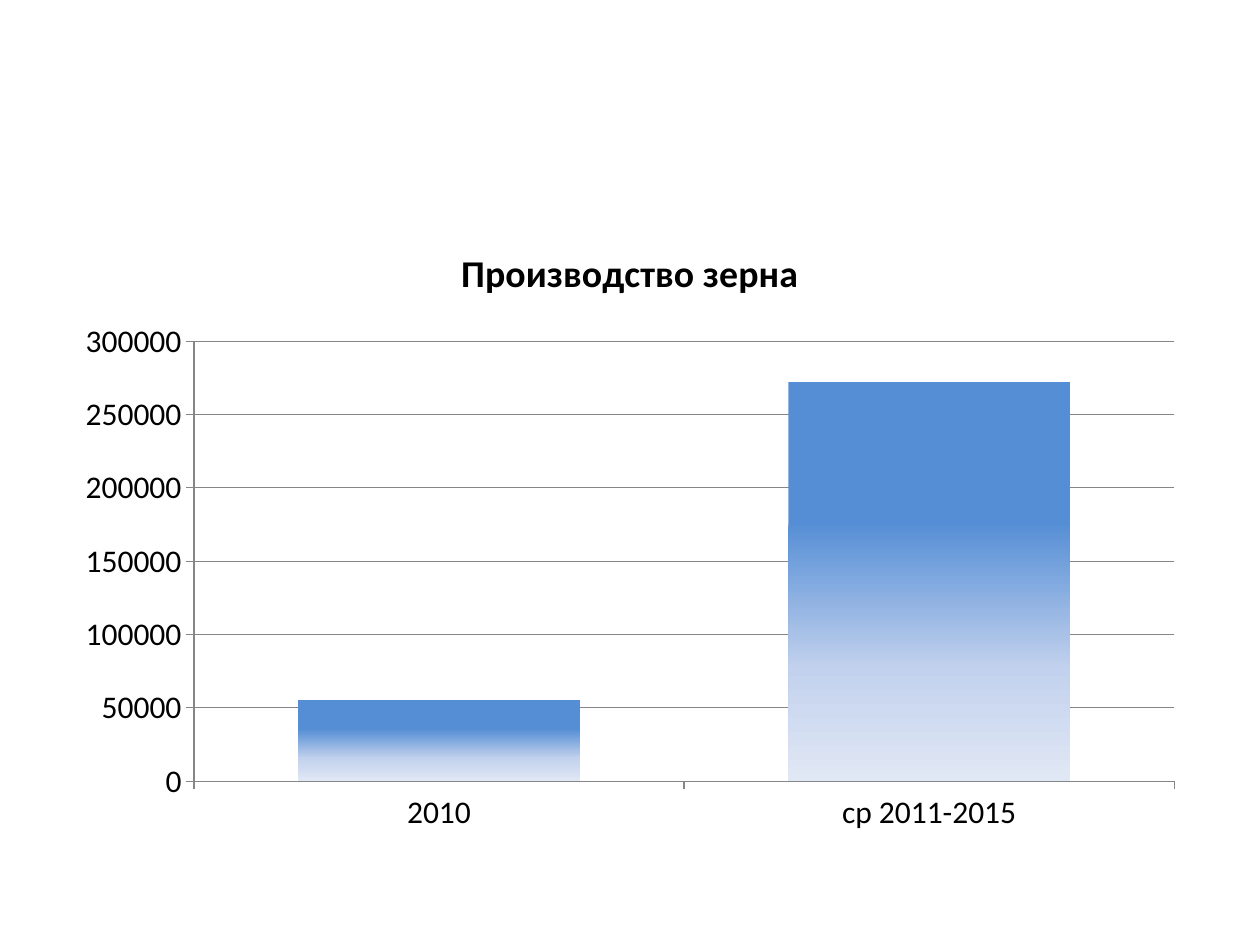
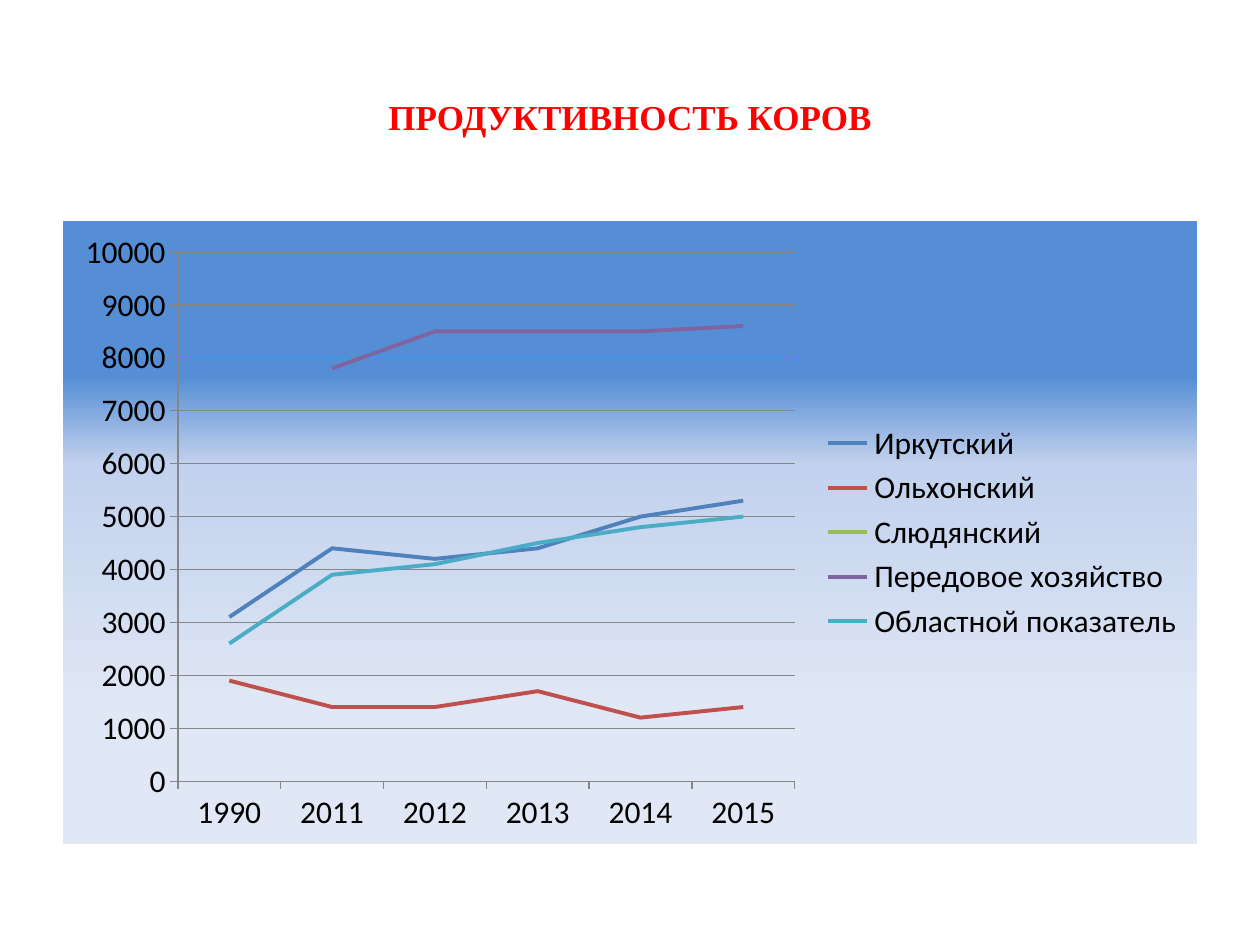
"""Builds two slides of farming statistics: grain output and milk yield of cows."""
from lxml import etree
from pptx import Presentation
from pptx.chart.data import CategoryChartData
from pptx.dml.color import RGBColor
from pptx.enum.chart import XL_CHART_TYPE, XL_LEGEND_POSITION, XL_TICK_MARK
from pptx.enum.text import MSO_ANCHOR, PP_ALIGN
from pptx.oxml.ns import nsdecls, qn
from pptx.util import Inches, Pt

SLIDE_WIDTH, SLIDE_HEIGHT = Inches(10), Inches(7.5)
MARGIN = 0.05
TITLE_TOP, TITLE_HEIGHT = 0.04, 1 / 6
CHART_TOP, CHART_HEIGHT = 0.7 / 3, 0.66

CHART_FONT, TITLE_FONT = "Calibri", "Times New Roman"
BLACK, RED, AXIS_GRAY = "000000", "FF0000", "868686"
SKY = ["558ED5", "C2D1ED", "E1E8F5"]

GRAIN_TITLE = "Производство зерна"
GRAIN = {
    "categories": ["2010", "ср 2011-2015"],
    "series": [(GRAIN_TITLE, [55000, 272000])],
}
GRAIN_STOPS = [35, 72, 100]

COWS_TITLE = "ПРОДУКТИВНОСТЬ КОРОВ"
COWS = {
    "categories": ["1990", "2011", "2012", "2013", "2014", "2015"],
    "series": [
        ("Иркутский", [3100, 4400, 4200, 4400, 5000, 5300]),
        ("Ольхонский", [1900, 1400, 1400, 1700, 1200, 1400]),
        ("Слюдянский", [None] * 6),
        ("Передовое хозяйство", [None, 7800, 8500, 8500, 8500, 8600]),
        ("Областной показатель", [2600, 3900, 4100, 4500, 4800, 5000]),
    ],
}
COW_COLORS = ["4F81BD", "C0504D", "9BBB59", "8064A2", "4BACC6"]
COW_STOPS = [25, 39, 80]


def color(hex_string):
    return RGBColor.from_string(hex_string)


def set_font(font, name, size, hex_string, bold=False):
    font.name, font.size, font.bold = name, Pt(size), bold
    font.color.rgb = color(hex_string)


def place(top, height):
    """Give the box of a full-width row from its shares of the slide height."""
    return (int(SLIDE_WIDTH * MARGIN), int(SLIDE_HEIGHT * top),
            int(SLIDE_WIDTH * (1 - 2 * MARGIN)), int(SLIDE_HEIGHT * height))


def add_sky_gradient(element_before, stops):
    """Put shape properties with the vertical sky gradient after a chart element."""
    stop_xml = "".join(
        f'<a:gs pos="{stop * 1000}"><a:srgbClr val="{shade}"/></a:gs>'
        for stop, shade in zip(stops, SKY))
    element_before.addnext(etree.fromstring(
        f'<c:spPr {nsdecls("c", "a")}><a:gradFill><a:gsLst>{stop_xml}</a:gsLst>'
        '<a:lin ang="5400000" scaled="0"/></a:gradFill>'
        '<a:ln><a:noFill/></a:ln></c:spPr>'))


def add_chart(slide, chart_type, content):
    chart_data = CategoryChartData()
    chart_data.categories = content["categories"]
    for name, values in content["series"]:
        chart_data.add_series(name, values)
    chart = slide.shapes.add_chart(
        chart_type, *place(CHART_TOP, CHART_HEIGHT), chart_data).chart
    chart.has_title = chart.has_legend = False
    chart.plots[0].vary_by_categories = False
    set_font(chart.font, CHART_FONT, 18, BLACK)
    chart.value_axis.has_major_gridlines = True
    for axis in (chart.category_axis, chart.value_axis):
        axis.major_tick_mark = XL_TICK_MARK.OUTSIDE
        axis.minor_tick_mark = XL_TICK_MARK.NONE
    for part in (chart.category_axis, chart.value_axis,
                 chart.value_axis.major_gridlines):
        part.format.line.color.rgb = color(AXIS_GRAY)
        part.format.line.width = Pt(0.75)
    return chart


def add_grain_slide(slide):
    chart = add_chart(slide, XL_CHART_TYPE.COLUMN_CLUSTERED, GRAIN)
    chart.plots[0].gap_width = 74
    chart.has_title = True
    chart.chart_title.include_in_layout = False
    paragraph = chart.chart_title.text_frame.paragraphs[0]
    paragraph.text = GRAIN_TITLE
    set_font(paragraph.font, CHART_FONT, 21.6, BLACK, bold=True)
    for series in chart.element.iter(qn("c:ser")):
        add_sky_gradient(series.find(qn("c:tx")), GRAIN_STOPS)


def add_cows_slide(slide):
    frame = slide.shapes.add_textbox(*place(TITLE_TOP, TITLE_HEIGHT)).text_frame
    frame.word_wrap = True
    frame.vertical_anchor = MSO_ANCHOR.MIDDLE
    paragraph = frame.paragraphs[0]
    paragraph.text = COWS_TITLE
    paragraph.alignment = PP_ALIGN.CENTER
    set_font(paragraph.font, TITLE_FONT, 20, RED, bold=True)

    chart = add_chart(slide, XL_CHART_TYPE.LINE, COWS)
    chart.has_legend = True
    chart.legend.position = XL_LEGEND_POSITION.RIGHT
    chart.legend.include_in_layout = False
    for series, line_color in zip(chart.plots[0].series, COW_COLORS):
        series.smooth = False
        series.format.line.color.rgb = color(line_color)
        series.format.line.width = Pt(2.25)
    add_sky_gradient(chart.element.find(qn("c:chart")), COW_STOPS)


def main():
    presentation = Presentation()
    presentation.slide_width, presentation.slide_height = SLIDE_WIDTH, SLIDE_HEIGHT
    blank_layout = presentation.slide_layouts[6]
    for fill_slide in (add_grain_slide, add_cows_slide):
        fill_slide(presentation.slides.add_slide(blank_layout))
    presentation.save("out.pptx")


if __name__ == "__main__":
    main()
